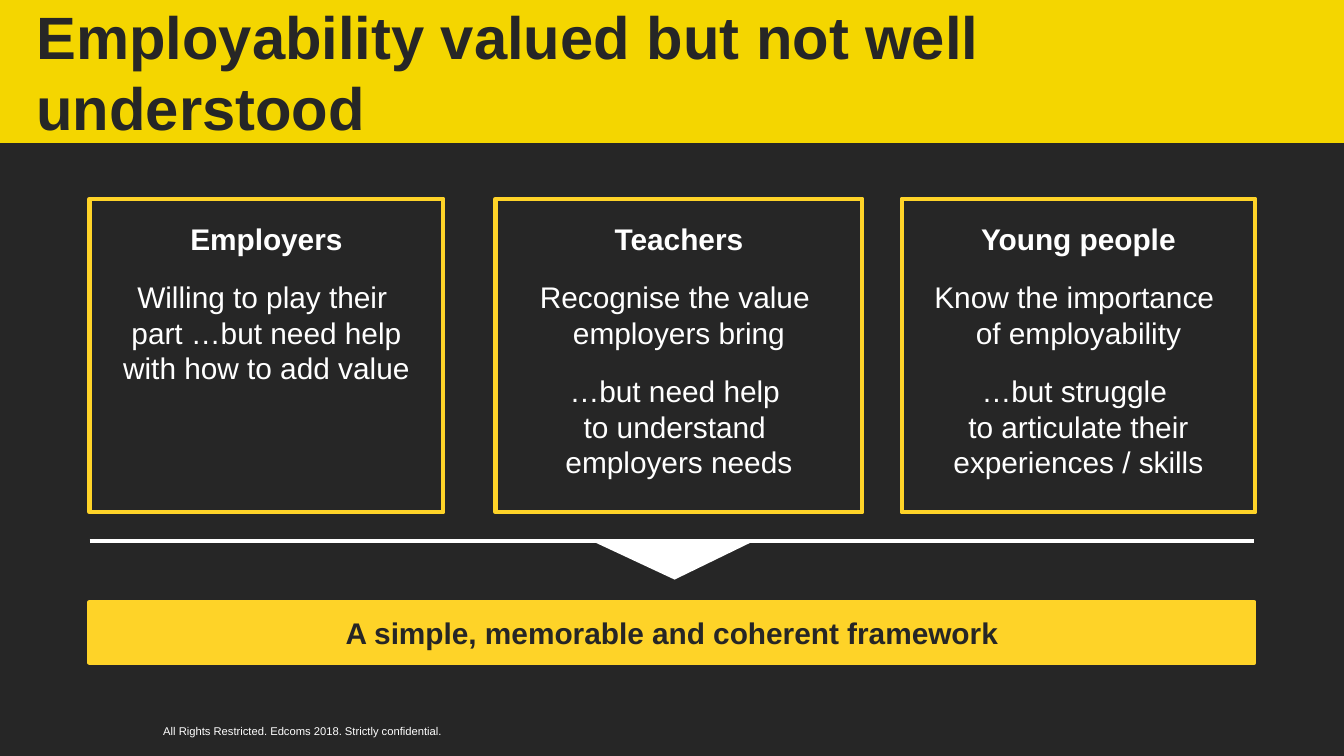
from lxml.etree import SubElement
from pptx import Presentation
from pptx.dml.color import RGBColor
from pptx.enum.shapes import MSO_CONNECTOR, MSO_SHAPE
from pptx.enum.text import MSO_ANCHOR as Anchor, MSO_AUTO_SIZE as AutoSize, PP_ALIGN as Align
from pptx.oxml.ns import qn
from pptx.util import Pt

DARK, WHITE = "262626", "FFFFFF"
BAND, GOLD = "F4D600", "FED328"
LEFT, RIGHT = 48, 672
GROUP_TOP, GROUP_HEIGHT = 106.5, 168
DIVIDER_Y = 290

# Left edge, width, then heading and statements of each group
GROUPS = [
    (48, 189.5, ["Employers",
                 "Willing to play their \vpart …but need help with how to add value"]),
    (265.5, 196.5, ["Teachers",
                    "Recognise the value \vemployers bring",
                    "…but need help \vto understand \vemployers needs"]),
    (483, 189.5, ["Young people",
                  "Know the importance \vof employability",
                  "…but struggle \vto articulate their experiences / skills"]),
]


def color(value):
    return RGBColor.from_string(value)


class Slide:
    """Holds the style and the page being built."""

    font = "Arial"
    line_width = 2.25

    def __init__(self, deck):
        self.page = deck.slides.add_slide(deck.slide_layouts[5])
        self.page.background.fill.solid()
        self.page.background.fill.fore_color.rgb = color(DARK)

    def frame(self, box, insets, anchor):
        frame = box.text_frame
        frame.word_wrap = True
        frame.auto_size = AutoSize.NONE
        frame.vertical_anchor = anchor
        (frame.margin_left, frame.margin_top,
         frame.margin_right, frame.margin_bottom) = map(Pt, insets)
        return frame

    def fill_para(self, para, text, size, ink, bold=False, align=Align.CENTER):
        para.text = text
        para.alignment = align
        for span in para.runs:
            span.font.name = self.font
            span.font.size = Pt(size)
            span.font.bold = bold
            span.font.color.rgb = color(ink)

    def title(self, text, left, top, width, height):
        title = self.page.shapes.title
        title.left, title.top, title.width, title.height = map(Pt, (left, top, width, height))
        para = self.frame(title, (0, 0, 0, 0), Anchor.MIDDLE).paragraphs[0]
        self.fill_para(para, text, 32, DARK, bold=True, align=Align.LEFT)
        para.line_spacing = Pt(38)

    def shape(self, kind, left, top, width, height, fill=None, line=None):
        shape = self.page.shapes.add_shape(kind, *map(Pt, (left, top, width, height)))
        shape.shadow.inherit = False
        if fill:
            shape.fill.solid()
            shape.fill.fore_color.rgb = color(fill)
        else:
            shape.fill.background()
        if line:
            shape.line.color.rgb = color(line)
            shape.line.width = Pt(self.line_width)
        else:
            shape.line.fill.background()
        return shape

    def title_band(self, width, height):
        """Draw the band behind the title."""
        band = self.shape(MSO_SHAPE.RECTANGLE, 0, 0, width, height, fill=BAND)
        self.page.shapes.title._element.addprevious(band._element)

    def group(self, left, width, texts):
        box = self.shape(MSO_SHAPE.RECTANGLE, left, GROUP_TOP, width, GROUP_HEIGHT, line=GOLD)
        frame = self.frame(box, (7.2, 11.5, 7.2, 3.6), Anchor.TOP)
        for index, text in enumerate(texts):
            para = frame.add_paragraph() if index else frame.paragraphs[0]
            self.fill_para(para, text, 16, WHITE, bold=index == 0)
            if index:
                para.space_before = Pt(12)

    def conclusion(self, text, top, height):
        bar = self.shape(MSO_SHAPE.RECTANGLE, LEFT, top, RIGHT - LEFT, height, GOLD, GOLD)
        frame = self.frame(bar, (7.2, 3.6, 7.2, 3.6), Anchor.MIDDLE)
        self.fill_para(frame.paragraphs[0], text, 16, DARK, bold=True)

    def pointer(self, left, top, width, height):
        pointer = self.shape(MSO_SHAPE.ISOSCELES_TRIANGLE, left, top, width, height, fill=WHITE)
        pointer.adjustments[0] = 0.49
        pointer.rotation = 180

    def divider(self, y):
        line = self.page.shapes.add_connector(
            MSO_CONNECTOR.STRAIGHT, *map(Pt, (LEFT, y, RIGHT, y)))
        line.line.color.rgb = color(WHITE)
        line.line.width = Pt(self.line_width)
        SubElement(line._element.spPr, qn("a:effectLst"))

    def footer(self, text, left, top, width, height):
        box = self.page.shapes.add_textbox(*map(Pt, (left, top, width, height)))
        frame = self.frame(box, (0, 0, 0, 0), Anchor.MIDDLE)
        self.fill_para(frame.paragraphs[0], text, 6, WHITE)


def main():
    deck = Presentation()
    deck.slide_width, deck.slide_height = Pt(720), Pt(405)
    slide = Slide(deck)
    slide.title_band(720, 76.5)
    slide.title("Employability valued but not well understood", 19.5, 24.5, 646.5, 28)
    for left, width, texts in GROUPS:
        slide.group(left, width, texts)
    slide.conclusion("A simple, memorable and coherent framework", 322.5, 32.5)
    slide.pointer(317.5, DIVIDER_Y, 86, 20.5)
    slide.divider(DIVIDER_Y)
    slide.footer("All Rights Restricted. Edcoms 2018. Strictly confidential.", 62, 382, 200, 19)
    deck.save("out.pptx")


if __name__ == "__main__":
    main()
